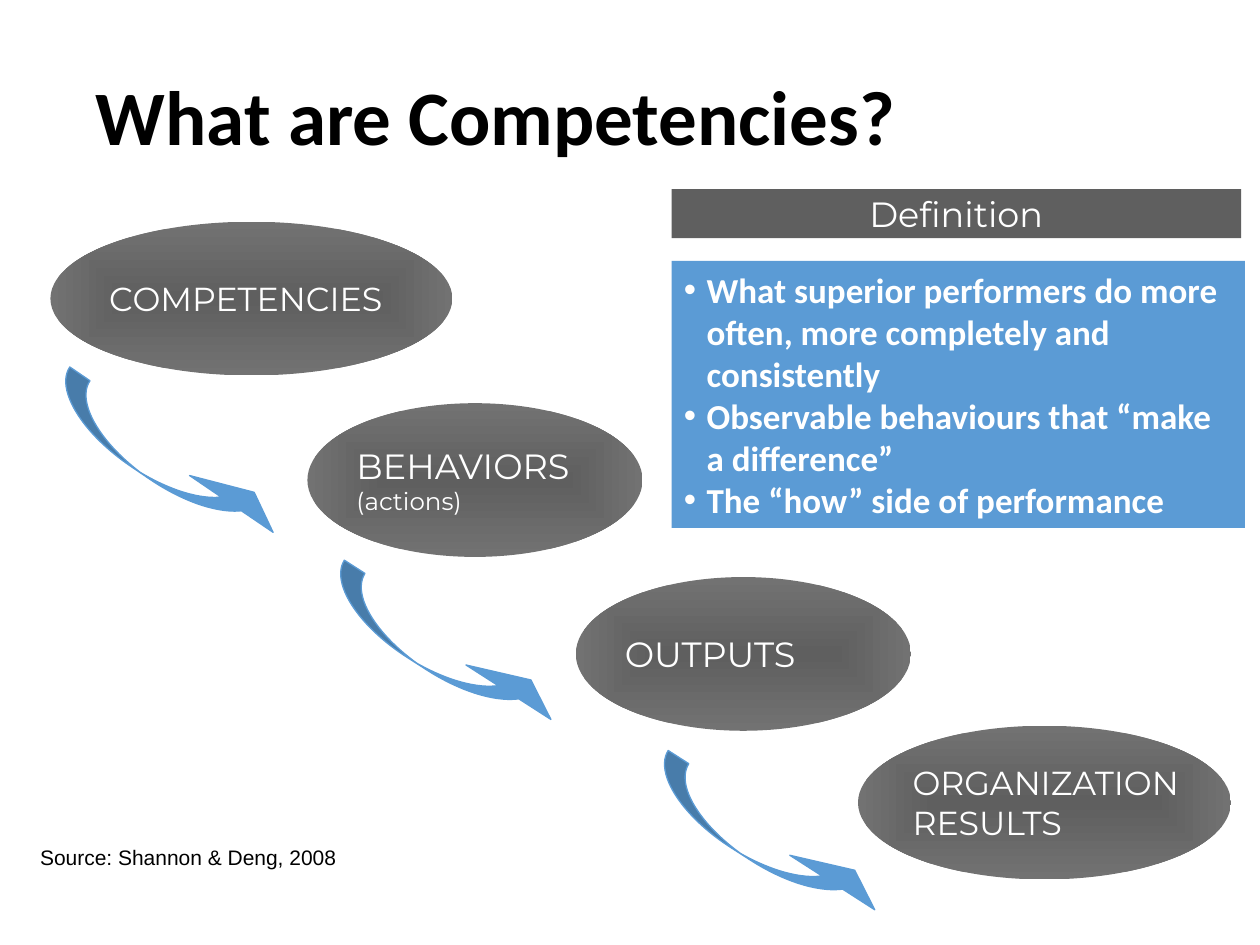
from dataclasses import dataclass

from lxml.etree import SubElement
from pptx import Presentation
from pptx.dml.color import RGBColor
from pptx.enum.shapes import MSO_SHAPE as Shape
from pptx.enum.text import MSO_ANCHOR as Anchor, MSO_AUTO_SIZE as AutoSize, PP_ALIGN as Align
from pptx.oxml.ns import qn
from pptx.util import Emu, Pt

PX = 9144  # 100 px to the inch
BLACK = RGBColor(0x00, 0x00, 0x00)
WHITE = RGBColor(0xFF, 0xFF, 0xFF)
BLUE = RGBColor(0x5B, 0x9B, 0xD5)
DARK_GRAY = RGBColor(0x5F, 0x5F, 0x5F)
MID_GRAY = RGBColor(0x72, 0x72, 0x72)
BULLET_INDENT = 18


@dataclass(frozen=True)
class Box:
    left: int
    top: int
    width: int
    height: int

    def emu(self) -> list[Emu]:
        return [Emu(n * PX) for n in (self.left, self.top, self.width, self.height)]


@dataclass(frozen=True)
class Line:
    text: str
    size: int


@dataclass(frozen=True)
class Stage:
    box: Box
    lines: tuple[Line, ...]


@dataclass(frozen=True)
class Arrow:
    box: Box
    rotation: float


TITLE_BOX = Box(66, 58, 896, 66)
DEFINITION_BOX = Box(533, 207, 455, 212)
HEADING_BOX = Box(533, 150, 452, 39)
SOURCE_BOX = Box(22, 665, 257, 30)

DEFINITION = (
    "What superior performers do more often, more completely and consistently",
    "Observable behaviours that “make a difference”",
    "The “how” side of performance",
)
STAGES = (
    Stage(Box(40, 176, 319, 122), (Line("COMPETENCIES", 19),)),
    Stage(Box(244, 320, 266, 122), (Line("BEHAVIORS", 20), Line("(actions)", 14))),
    Stage(Box(457, 458, 266, 122), (Line("OUTPUTS", 20),)),
    Stage(Box(681, 576, 296, 122), (Line("ORGANIZATION", 19), Line("RESULTS", 19))),
)
ARROWS = (
    Arrow(Box(26, 349, 217, 38), 34.2),
    Arrow(Box(246, 500, 216, 38), 32.7),
    Arrow(Box(503, 651, 216, 38), 32.7),
)
ARROW_ADJUSTMENTS = (0.51, 2.11, 0.47)


def write(frame, lines, *, font: str, color: RGBColor, bold: bool = False,
          align=Align.LEFT, anchor=Anchor.MIDDLE, wrap: bool = True,
          grow: bool = False, inset: bool = True, bullets: bool = False) -> None:
    frame.word_wrap = wrap
    frame.auto_size = AutoSize.SHAPE_TO_FIT_TEXT if grow else AutoSize.NONE
    frame.vertical_anchor = anchor
    if not inset:
        frame.margin_left = frame.margin_top = frame.margin_right = frame.margin_bottom = 0
    for index, line in enumerate(lines):
        paragraph = frame.add_paragraph() if index else frame.paragraphs[0]
        paragraph.alignment = align
        if bullets:
            add_bullet(paragraph)
        run = paragraph.add_run()
        run.text = line.text
        run.font.name = font
        run.font.size = Pt(line.size)
        run.font.bold = bold
        run.font.color.rgb = color


def add_bullet(paragraph) -> None:
    properties = paragraph._p.get_or_add_pPr()
    properties.set("marL", str(BULLET_INDENT * PX))
    properties.set("indent", str(-BULLET_INDENT * PX))
    SubElement(properties, qn("a:buFont"), typeface="Arial")
    SubElement(properties, qn("a:buChar"), char="•")


def add_plain_shape(slide, preset, box: Box, fill: RGBColor | None = None):
    """Add a shape without shadow or outline."""
    shape = slide.shapes.add_shape(preset, *box.emu())
    shape.shadow.inherit = False
    shape.line.fill.background()
    if fill is not None:
        shape.fill.solid()
        shape.fill.fore_color.rgb = fill
    return shape


def fill_from_center(shape, inner: RGBColor, outer: RGBColor) -> None:
    shape.fill.gradient()
    for stop, color, position in zip(shape.fill.gradient_stops, (inner, outer), (0, 1)):
        stop.color.rgb = color
        stop.position = position
    gradient = shape._element.spPr.find(qn("a:gradFill"))
    gradient.remove(gradient.find(qn("a:lin")))
    shading = SubElement(gradient, qn("a:path"), {"path": "shape"})
    SubElement(shading, qn("a:fillToRect"), dict.fromkeys("ltrb", "50000"))


def add_stage(slide, stage: Stage) -> None:
    ellipse = add_plain_shape(slide, Shape.OVAL, stage.box)
    fill_from_center(ellipse, DARK_GRAY, MID_GRAY)
    write(ellipse.text_frame, stage.lines, font="Montserrat", color=WHITE,
          wrap=False, inset=False)


def add_arrow(slide, arrow: Arrow) -> None:
    curve = add_plain_shape(slide, Shape.CURVED_UP_ARROW, arrow.box, BLUE)
    curve.rotation = arrow.rotation
    curve.line.color.rgb = BLUE
    curve.line.width = Pt(0.75)
    for index, value in enumerate(ARROW_ADJUSTMENTS):
        curve.adjustments[index] = value


def main() -> None:
    deck = Presentation()
    deck.slide_width, deck.slide_height = Emu(1000 * PX), Emu(750 * PX)
    slide = deck.slides.add_slide(deck.slide_layouts[5])

    title = slide.shapes.title
    title.left, title.top, title.width, title.height = TITLE_BOX.emu()
    write(title.text_frame, [Line("What are Competencies?", 44)],
          font="Calibri", color=BLACK, bold=True)

    definition = add_plain_shape(slide, Shape.RECTANGLE, DEFINITION_BOX, BLUE)
    write(definition.text_frame, [Line(text, 20) for text in DEFINITION],
          font="Calibri", color=WHITE, bold=True, grow=True, bullets=True)

    heading = add_plain_shape(slide, Shape.RECTANGLE, HEADING_BOX, DARK_GRAY)
    write(heading.text_frame, [Line("Definition", 20)], font="Montserrat",
          color=WHITE, align=Align.CENTER, wrap=False, inset=False)

    for stage in STAGES:
        add_stage(slide, stage)
    for arrow in ARROWS:
        add_arrow(slide, arrow)

    source = slide.shapes.add_textbox(*SOURCE_BOX.emu())
    write(source.text_frame, [Line("Source: Shannon & Deng, 2008", 12)],
          font="Arial", color=BLACK, anchor=Anchor.TOP, wrap=False, grow=True)

    deck.save("out.pptx")


if __name__ == "__main__":
    main()
